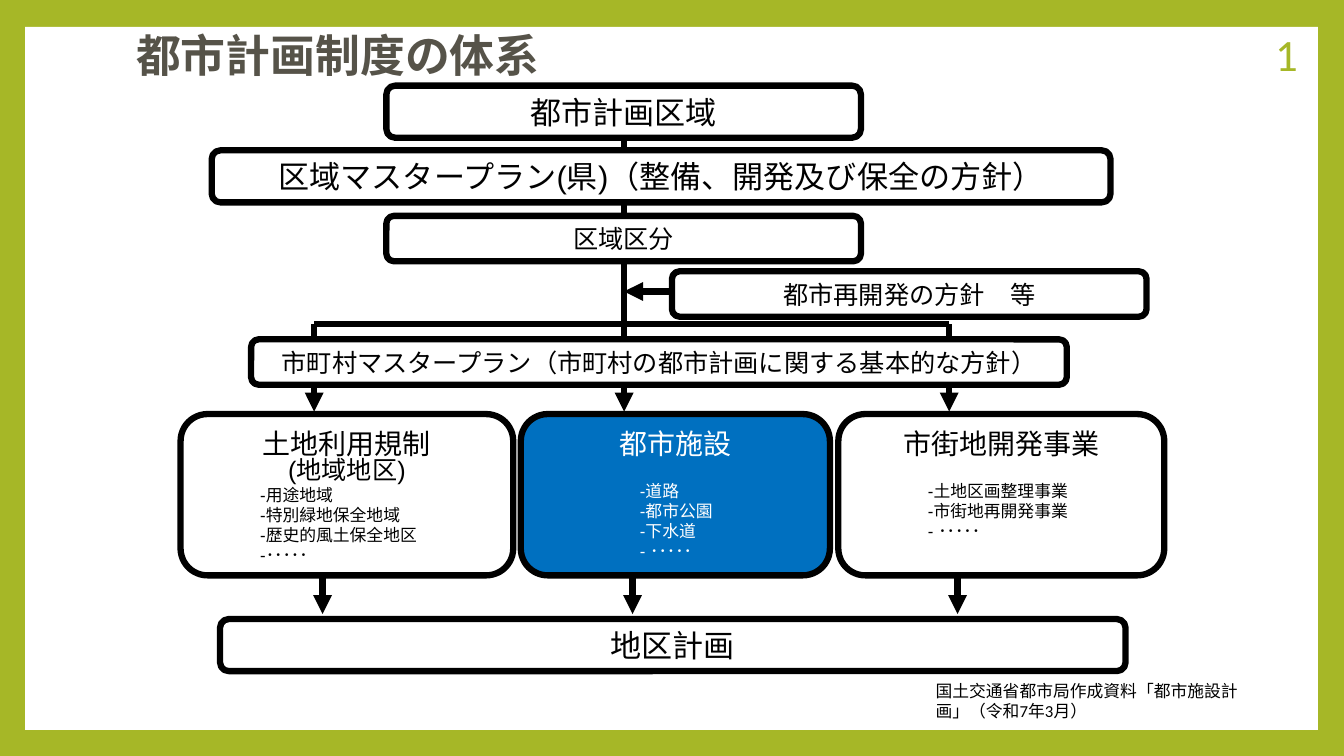
import dataclasses
import typing

import lxml.etree
import pptx
import pptx.dml.color
import pptx.enum.shapes
import pptx.enum.text
import pptx.oxml.ns
import pptx.util

RGB = pptx.dml.color.RGBColor
GREEN = RGB(0xA6, 0xB7, 0x27)
WHITE = RGB(0xFF, 0xFF, 0xFF)
BLACK = RGB(0, 0, 0)
BLUE = RGB(0x00, 0x70, 0xC0)
GREY = RGB(0x56, 0x53, 0x49)

SLIDE_WIDTH = pptx.util.Inches(13.33)
SLIDE_HEIGHT = pptx.util.Inches(7.5)
COLUMNS, ROWS = 160, 90
LINE_WIDTH = pptx.util.Pt(4.5)
ALIGN = pptx.enum.text.PP_ALIGN
ANCHOR = pptx.enum.text.MSO_ANCHOR
SHAPE = pptx.enum.shapes.MSO_SHAPE


@dataclasses.dataclass(frozen=True)
class Area:
    """A place on the slide, in grid columns and rows."""
    column: float
    row: float
    columns: float
    rows: float


@dataclasses.dataclass(frozen=True)
class Stage:
    text: str
    area: Area
    size: float


@dataclasses.dataclass(frozen=True)
class Pillar:
    """One of the three kinds of plan, with its examples."""
    heading: str
    subheading: str
    items: tuple[str, ...]
    column: float
    columns: float
    indent: float
    fill: RGB = WHITE
    color: RGB = BLACK


@dataclasses.dataclass(frozen=True)
class Link:
    start: tuple[float, float]
    end: tuple[float, float]
    arrow: bool = True


PILLAR_ROW, PILLAR_ROWS = 49.3, 19.2
BRANCH_ROW = 38.6
LEFT_BRANCH, TRUNK, RIGHT_BRANCH = 37.4, 74.3, 113

FRAME = Area(3, 3.2, 153.9, 83.7)
DISTRICT_PLAN = Stage("地区計画", Area(26.2, 73.7, 107.8, 6.2), 22.2)
REDEVELOPMENT = Stage("都市再開発の方針　等", Area(80, 32.3, 56.5, 5.4), 18)
MAIN_STAGES = (
    Stage("市町村マスタープラン（市町村の都市計画に関する基本的な方針）", Area(29.9, 40.4, 97.1, 5.4), 18),
    Stage("区域区分", Area(46, 25.7, 56.5, 5.4), 18),
    Stage("都市計画区域", Area(46, 10.2, 56.5, 6.2), 22.2),
    Stage("区域マスタープラン(県)（整備、開発及び保全の方針）", Area(25.2, 17.9, 107, 6.2), 22.2),
)
PILLARS = (
    Pillar("土地利用規制", "(地域地区)",
           ("-用途地域", "-特別緑地保全地域", "-歴史的風土保全地区", "-･････"), 21.5, 39.6, 8.3),
    Pillar("都市施設", "", ("-道路", "-都市公園", "-下水道", "- ･････"), 62, 36.8, 13, BLUE, WHITE),
    Pillar("市街地開発事業", "",
           ("-土地区画整理事業", "-市街地再開発事業", "- ･････"), 99.8, 38.8, 9.5),
)
LINKS = (
    Link((80, 34.7), (TRUNK, 34.7)),
    *(Link((branch + 1, 68.5), (branch + 1, 73.1)) for branch in (LEFT_BRANCH, TRUNK, RIGHT_BRANCH)),
    *(Link((branch, BRANCH_ROW), (branch, 49)) for branch in (LEFT_BRANCH, RIGHT_BRANCH)),
    Link((LEFT_BRANCH, BRANCH_ROW), (RIGHT_BRANCH, BRANCH_ROW), arrow=False),
    Link((TRUNK, 16.2), (TRUNK, 49)),
)


def across(columns: float) -> int:
    return round(SLIDE_WIDTH * columns / COLUMNS)


def down(rows: float) -> int:
    return round(SLIDE_HEIGHT * rows / ROWS)


def bounds(area: Area) -> tuple[int, int, int, int]:
    return across(area.column), down(area.row), across(area.columns), down(area.rows)


def apply(target: typing.Any, values: dict[str, typing.Any]) -> None:
    for name, value in values.items():
        setattr(target, name, value)


def write(paragraph: typing.Any, text: str, size: float, color: RGB,
          align: ALIGN = ALIGN.CENTER, font: str = "Arial", bold: bool = False) -> None:
    run = paragraph.add_run()
    run.text = text
    paragraph.alignment = align
    apply(run.font, {"name": font, "size": pptx.util.Pt(size), "bold": bold})
    run.font.color.rgb = color


def add_box(slide: typing.Any, area: Area, fill: RGB, kind: SHAPE = SHAPE.ROUNDED_RECTANGLE) -> typing.Any:
    box = slide.shapes.add_shape(kind, *bounds(area))
    box.shadow.inherit = False
    box.fill.solid()
    box.fill.fore_color.rgb = fill
    if kind == SHAPE.ROUNDED_RECTANGLE:
        box.adjustments[0] = 0.167
        box.line.color.rgb = BLACK
        box.line.width = LINE_WIDTH
    else:
        box.line.fill.background()
    return box


def add_stage(slide: typing.Any, stage: Stage) -> None:
    frame = add_box(slide, stage.area, WHITE).text_frame
    apply(frame, {"word_wrap": True, "vertical_anchor": ANCHOR.MIDDLE})
    write(frame.paragraphs[0], stage.text, stage.size, BLACK)


def add_pillar(slide: typing.Any, pillar: Pillar) -> None:
    area = Area(pillar.column, PILLAR_ROW, pillar.columns, PILLAR_ROWS)
    frame = add_box(slide, area, pillar.fill).text_frame
    side = pptx.util.Inches(0.02)
    apply(frame, {"word_wrap": True, "vertical_anchor": ANCHOR.TOP,
                  "margin_left": side, "margin_right": side})
    write(frame.paragraphs[0], pillar.heading, 20, pillar.color)
    if pillar.subheading:
        subheading = frame.add_paragraph()
        subheading.line_spacing = 0.8
        write(subheading, pillar.subheading, 18, pillar.color)
    for position, item in enumerate(pillar.items):
        paragraph = frame.add_paragraph()
        write(paragraph, item, 12, pillar.color, ALIGN.LEFT)
        apply_indent = paragraph._p.get_or_add_pPr()
        apply_indent.set("marL", str(across(pillar.indent)))
        apply_indent.set("indent", "0")
        if position == 0 and not pillar.subheading:
            paragraph.space_before = pptx.util.Pt(14.4)


def add_link(slide: typing.Any, link: Link) -> None:
    (start_column, start_row), (end_column, end_row) = link.start, link.end
    connector = slide.shapes.add_connector(
        pptx.enum.shapes.MSO_CONNECTOR.STRAIGHT,
        across(start_column), down(start_row), across(end_column), down(end_row))
    connector.line.color.rgb = BLACK
    connector.line.width = LINE_WIDTH
    if link.arrow:
        lxml.etree.SubElement(connector.line._get_or_add_ln(),
                              pptx.oxml.ns.qn("a:tailEnd"), type="triangle")
    lxml.etree.SubElement(connector._element.spPr, pptx.oxml.ns.qn("a:effectLst"))


def add_caption(slide: typing.Any, text: str, area: Area, size: float, color: RGB,
                align: ALIGN, anchor: ANCHOR) -> None:
    frame = slide.shapes.add_textbox(*bounds(area)).text_frame
    apply(frame, {"word_wrap": True, "vertical_anchor": anchor})
    write(frame.paragraphs[0], text, size, color, align, "Calibri")


def format_title(slide: typing.Any) -> None:
    title = slide.shapes.title
    left, top, width, height = bounds(Area(15, 2.4, 118.6, 8.2))
    apply(title, {"left": left, "top": top, "width": width, "height": height})
    apply(title.text_frame, {"word_wrap": True, "vertical_anchor": ANCHOR.MIDDLE,
                             "auto_size": pptx.enum.text.MSO_AUTO_SIZE.NONE})
    write(title.text_frame.paragraphs[0], "都市計画制度の体系", 32, GREY, ALIGN.LEFT, "Calibri", True)


def main() -> None:
    deck = pptx.Presentation()
    apply(deck, {"slide_width": SLIDE_WIDTH, "slide_height": SLIDE_HEIGHT})
    slide = deck.slides.add_slide(deck.slide_layouts[5])
    slide.background.fill.solid()
    slide.background.fill.fore_color.rgb = GREEN
    format_title(slide)
    page = add_box(slide, FRAME, WHITE, SHAPE.RECTANGLE)
    slide.shapes.title._element.addprevious(page._element)

    add_stage(slide, DISTRICT_PLAN)
    for pillar in PILLARS:
        add_pillar(slide, pillar)
    add_stage(slide, REDEVELOPMENT)
    for link in LINKS:
        add_link(slide, link)
    for stage in MAIN_STAGES:
        add_stage(slide, stage)
    add_caption(slide, "国土交通省都市局作成資料「都市施設計画」（令和7年3月）",
                Area(110.2, 80.4, 41.9, 6), 12, BLACK, ALIGN.LEFT, ANCHOR.TOP)
    add_caption(slide, "1", Area(133.3, 4, 22.4, 4.8), 32, GREEN, ALIGN.RIGHT, ANCHOR.MIDDLE)
    deck.save("out.pptx")


if __name__ == "__main__":
    main()
